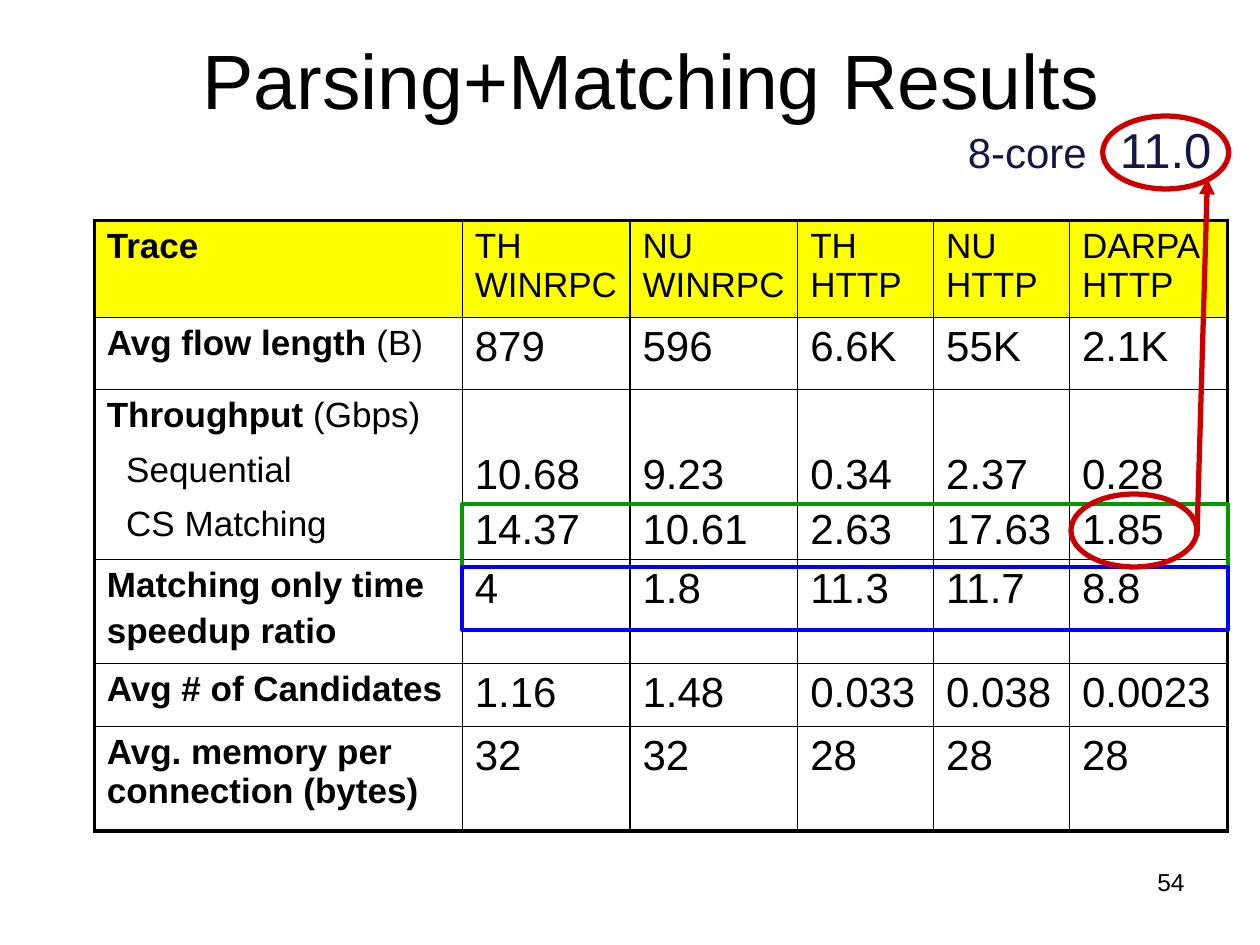
from dataclasses import dataclass

from lxml import etree
from pptx import Presentation
from pptx.dml.color import RGBColor
from pptx.enum import shapes, text
from pptx.oxml import ns
from pptx.util import Cm, Pt


@dataclass(frozen=True)
class Theme:
    font: str = "Arial"
    black: str = "000000"
    navy: str = "161645"
    header: str = "FFFF00"
    green: str = "009900"
    blue: str = "0000FF"
    red: str = "CC0000"
    title: int = 44
    callout: int = 28
    value: int = 24
    label: int = 20
    number: int = 14
    grid: float = 1
    frame: float = 2.25
    mark: float = 3


THEME = Theme()
COLUMNS = (7.42, 3.38, 3.38, 2.74, 2.74, 3.18)
ROW_HEIGHTS = (1.9, 1.45, 3.43, 1.97, 1.2, 2.11)
HEADINGS = ("TH WINRPC", "NU WINRPC", "TH HTTP", "NU HTTP", "DARPA HTTP")

# A label is a list of lines; a line is a list of (wording, bold) runs.
LABELS = (
    [[("Trace", True)]],
    [[("Avg flow length ", True), ("(B)", False)]],
    [[("Throughput", True), (" (Gbps)", False)],
     [("Sequential", False)], [("CS Matching", False)]],
    [[("Matching only time", True)], [("speedup ratio", True)]],
    [[("Avg # of Candidates", True)]],
    [[("Avg. memory per connection (bytes)", True)]],
)
VALUES = (
    ("879", "596", "6.6K", "55K", "2.1K"),
    ("10.68\n14.37", "9.23\n10.61", "0.34\n2.63", "2.37\n17.63", "0.28\n1.85"),
    ("4", "1.8", "11.3", "11.7", "8.8"),
    ("1.16", "1.48", "0.033", "0.038", "0.0023"),
    ("32", "32", "28", "28", "28"),
)
THROUGHPUT_ROW = 2


def write(frame, lines, size, color=THEME.black, align=text.PP_ALIGN.LEFT,
          gap=0.2, spacing=None, sub_indent=0):
    """Fill a text frame; gap is a share of the size, sub_indent is in cm."""
    if isinstance(lines, str):
        lines = [[(line, False)] for line in lines.split("\n")]
    for index, runs in enumerate(lines):
        line = frame.paragraphs[0] if index == 0 else frame.add_paragraph()
        line.alignment = align
        if spacing:
            line.line_spacing = spacing
        if index:
            line.space_before = Pt(size * gap)
            if sub_indent:
                line._p.get_or_add_pPr().set("marL", str(Cm(sub_indent)))
        for wording, bold in runs:
            run = line.add_run()
            run.text = wording
            run.font.name = THEME.font
            run.font.size = Pt(size)
            run.font.bold = bold
            run.font.color.rgb = RGBColor.from_string(color)


def add_label(slide, box, wording, size, anchor=text.MSO_ANCHOR.TOP, **style):
    frame = slide.shapes.add_textbox(*map(Cm, box)).text_frame
    frame.word_wrap = True
    frame.vertical_anchor = anchor
    write(frame, wording, size, **style)


def add_outline(slide, preset, box, color, width):
    outline = slide.shapes.add_shape(preset, *map(Cm, box))
    outline.shadow.inherit = False
    outline.fill.background()
    outline.line.color.rgb = RGBColor.from_string(color)
    outline.line.width = Pt(width)
    return outline


def add_arrow(slide, start, end):
    arrow = slide.shapes.add_connector(
        shapes.MSO_CONNECTOR.STRAIGHT, *map(Cm, start + end))
    arrow.line.color.rgb = RGBColor.from_string(THEME.red)
    arrow.line.width = Pt(THEME.mark)
    etree.SubElement(arrow.line._get_or_add_ln(), ns.qn("a:tailEnd"), type="triangle")
    etree.SubElement(arrow._element.spPr, ns.qn("a:effectLst"))


def set_borders(cell, row, column):
    """Draw thin grid lines, with a thicker line round the whole table."""
    outer = {
        "lnL": column == 0,
        "lnR": column == len(COLUMNS) - 1,
        "lnT": row == 0,
        "lnB": row == len(ROW_HEIGHTS) - 1,
    }
    properties = cell._tc.get_or_add_tcPr()
    for index, (side, is_outer) in enumerate(outer.items()):
        width = Pt(THEME.frame if is_outer else THEME.grid)
        border = etree.Element(ns.qn(f"a:{side}"), w=str(int(width)))
        fill = etree.SubElement(border, ns.qn("a:solidFill"))
        etree.SubElement(fill, ns.qn("a:srgbClr"), val=THEME.black)
        properties.insert(index, border)


def add_results(slide):
    table = slide.shapes.add_table(
        len(ROW_HEIGHTS), len(COLUMNS), Cm(1.9), Cm(4.45),
        Cm(sum(COLUMNS)), Cm(sum(ROW_HEIGHTS))).table
    table.first_row = table.horz_banding = False
    for column, width in zip(table.columns, COLUMNS):
        column.width = Cm(width)
    for row, height in zip(table.rows, ROW_HEIGHTS):
        row.height = Cm(height)

    for r, (label, values) in enumerate(zip(LABELS, (HEADINGS,) + VALUES)):
        for c, content in enumerate((label,) + values):
            cell = table.cell(r, c)
            if r == 0:
                cell.fill.solid()
                cell.fill.fore_color.rgb = RGBColor.from_string(THEME.header)
            else:
                cell.fill.background()
            set_borders(cell, r, c)
            size = THEME.label if r == 0 or c == 0 else THEME.value
            if r == THROUGHPUT_ROW and c == 0:
                write(cell.text_frame, content, size, gap=0.45, sub_indent=0.39)
            else:
                write(cell.text_frame, content, size)
            if r == THROUGHPUT_ROW and c > 0:
                cell.vertical_anchor = text.MSO_ANCHOR.BOTTOM


def add_highlights(slide):
    rectangle, oval = shapes.MSO_SHAPE.RECTANGLE, shapes.MSO_SHAPE.OVAL
    for top, color in ((10.16, THEME.green), (11.43, THEME.blue)):
        add_outline(slide, rectangle, (9.32, top, 15.44, 1.27), color, THEME.frame)
    add_outline(slide, oval, (21.59, 9.96, 2.54, 1.47), THEME.red, THEME.mark)
    speed = add_outline(slide, oval, (22.23, 2.34, 2.54, 1.47), THEME.red, THEME.mark)
    speed.text_frame.word_wrap = False
    speed.text_frame.vertical_anchor = text.MSO_ANCHOR.MIDDLE
    write(speed.text_frame, "11.0", THEME.callout, color=THEME.navy,
          align=text.PP_ALIGN.CENTER, spacing=0.9)
    add_arrow(slide, (24.13, 10.8), (24.34, 3.6))
    add_label(slide, (19.26, 2.54, 3.6, 1.17), "8-core", THEME.value,
              color=THEME.navy, spacing=0.9)


def main():
    deck = Presentation()
    deck.slide_width, deck.slide_height = Cm(25.4), Cm(19.05)
    slide = deck.slides.add_slide(deck.slide_layouts[6])
    add_label(slide, (1.7, 0, 22.86, 3.18), "Parsing+Matching Results", THEME.title,
              anchor=text.MSO_ANCHOR.MIDDLE, align=text.PP_ALIGN.CENTER)
    add_results(slide)
    add_highlights(slide)
    add_label(slide, (18.2, 17.35, 5.93, 1.32), "54", THEME.number,
              align=text.PP_ALIGN.RIGHT)
    deck.save("out.pptx")


if __name__ == "__main__":
    main()
